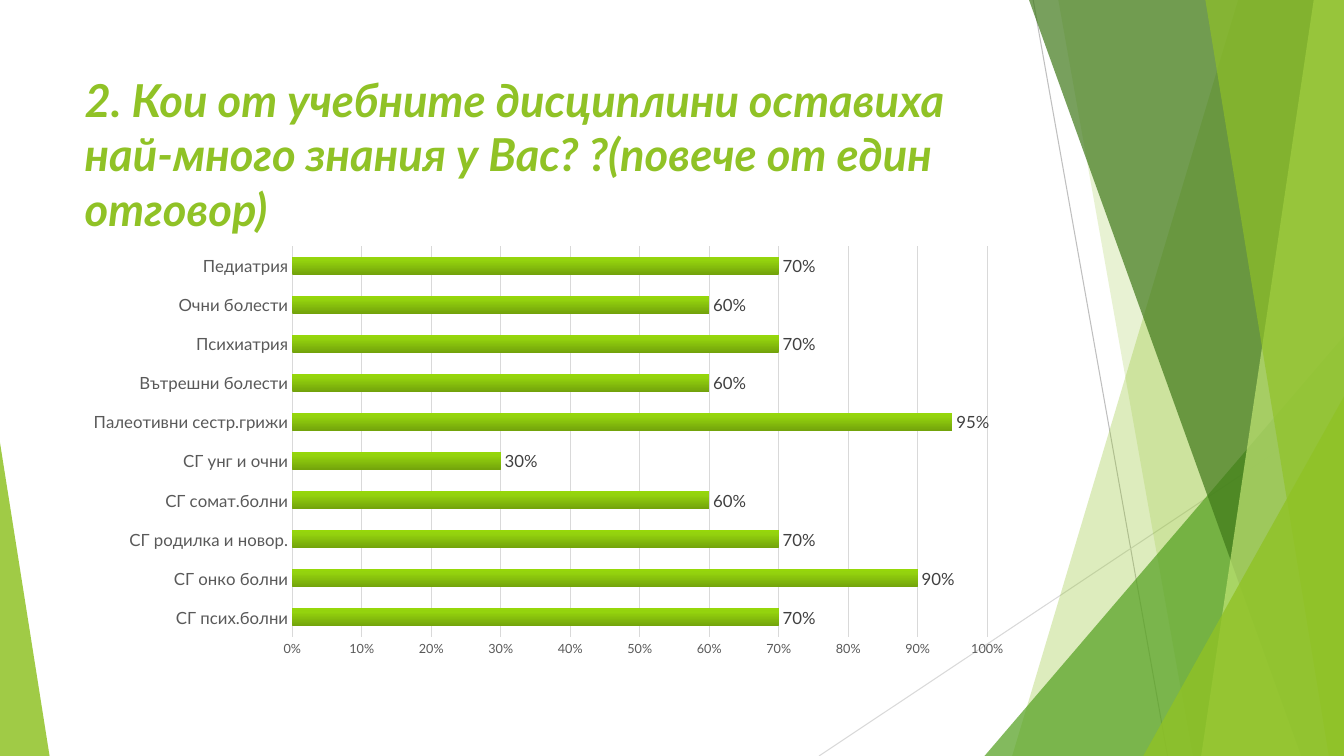
import pptx
import pptx.chart.data
import pptx.dml.color
import pptx.enum.chart
import pptx.enum.shapes
import pptx.enum.text
import pptx.oxml
import pptx.oxml.ns
import pptx.util
from lxml import etree

RGB = pptx.dml.color.RGBColor
LIME = RGB(0x90, 0xC2, 0x26)
PALE_LIME = RGB(0xC0, 0xE4, 0x74)
LEAF = RGB(0x54, 0xA0, 0x21)
FOREST = RGB(0x3F, 0x78, 0x19)
SILVER = RGB(0xBF, 0xBF, 0xBF)
LIGHT_GREY = RGB(0xD9, 0xD9, 0xD9)
AXIS_GREY = RGB(0x59, 0x59, 0x59)
LABEL_GREY = RGB(0x40, 0x40, 0x40)
BAR_STOPS = ((0, RGB(0x72, 0xA2, 0x0B)), (80, RGB(0x94, 0xD3, 0x0E)),
             (100, RGB(0x96, 0xD7, 0x0A)))

COLS, ROWS = 160, 90
TITLE = ("2. Кои от учебните дисциплини оставиха най-много знания у Вас? "
         "?(повече от един отговор)")
KNOWLEDGE = {
    "СГ псих.болни": 0.7,
    "СГ онко болни": 0.9,
    "СГ родилка и новор.": 0.7,
    "СГ сомат.болни": 0.6,
    "СГ унг и очни": 0.3,
    "Палеотивни сестр.грижи": 0.95,
    "Вътрешни болести": 0.6,
    "Психиатрия": 0.7,
    "Очни болести": 0.6,
    "Педиатрия": 0.7,
}


class Deck:
    """Draws on one slide, with all lengths in grid columns and rows."""

    font_name = "Lato"

    def __init__(self):
        self.prs = pptx.Presentation()
        self.prs.slide_width = pptx.util.Inches(13.333)
        self.prs.slide_height = pptx.util.Inches(7.5)
        self.s = self.prs.slides.add_slide(self.prs.slide_layouts[6])

    def grid(self, *lengths):
        """Turn alternating columns and rows into EMU."""
        units = (self.prs.slide_width / COLS, self.prs.slide_height / ROWS)
        return [round(n * units[i % 2]) for i, n in enumerate(lengths)]

    def style_font(self, font, size, color):
        font.name = self.font_name
        font.size = pptx.util.Pt(size)
        font.color.rgb = color

    def paint(self, sp, color, opacity):
        """Give a shape a flat, see-through fill and no outline."""
        sp.shadow.inherit = False
        sp.line.fill.background()
        sp.fill.solid()
        sp.fill.fore_color.rgb = color
        clr = sp.fill._xPr.find(".//" + pptx.oxml.ns.qn("a:srgbClr"))
        etree.SubElement(clr, pptx.oxml.ns.qn("a:alpha"), val=str(opacity * 1000))

    def line(self, x1, y1, x2, y2, color):
        sp = self.s.shapes.add_connector(
            pptx.enum.shapes.MSO_CONNECTOR.STRAIGHT, *self.grid(x1, y1, x2, y2))
        sp.line.color.rgb = color
        sp.line.width = pptx.util.Pt(0.75)
        etree.SubElement(sp._element.spPr, pptx.oxml.ns.qn("a:effectLst"))

    def facet(self, top_x, bottom_x, color, opacity):
        """Fill from a slanted edge to the right side of the slide."""
        edge = [self.grid(*point) for point in
                ((top_x, 0), (COLS, 0), (COLS, ROWS), (bottom_x, ROWS))]
        builder = self.s.shapes.build_freeform(*edge[0])
        builder.add_line_segments(edge[1:], close=True)
        self.paint(builder.convert_to_shape(), color, opacity)

    def triangle(self, x, y, width, apex, color, opacity):
        """Stand a triangle on the bottom edge; apex is 0 (left) to 1 (right)."""
        sp = self.s.shapes.add_shape(
            pptx.enum.shapes.MSO_SHAPE.ISOSCELES_TRIANGLE,
            *self.grid(x, y, width, ROWS - y))
        sp.adjustments[0] = apex
        self.paint(sp, color, opacity)

    def title(self, x, y, width, height, text):
        tf = self.s.shapes.add_textbox(*self.grid(x, y, width, height)).text_frame
        tf.word_wrap = True
        tf.vertical_anchor = pptx.enum.text.MSO_ANCHOR.TOP
        p = tf.paragraphs[0]
        p.text = text
        self.style_font(p.font, 32.4, LIME)
        p.font.bold = p.font.italic = True

    def bar_chart(self, x, y, width, height, shares):
        data = pptx.chart.data.CategoryChartData(number_format="0%")
        data.categories = list(shares)
        data.add_series("Series 1", list(shares.values()))
        chart = self.s.shapes.add_chart(
            pptx.enum.chart.XL_CHART_TYPE.BAR_CLUSTERED,
            *self.grid(x, y, width, height), data).chart
        chart.has_legend = chart.has_title = False
        chart.font.name = self.font_name
        chart.font.size = pptx.util.Pt(10)

        plot = chart.plots[0]
        plot.gap_width, plot.overlap, plot.vary_by_categories = 115, -20, False
        self.fill_bars(plot.series[0])
        plot.has_data_labels = True
        labels = plot.data_labels
        labels.show_value = True
        labels.number_format, labels.number_format_is_linked = "0%", False
        labels.position = pptx.enum.chart.XL_LABEL_POSITION.OUTSIDE_END
        self.style_font(labels.font, 12, LABEL_GREY)

        for axis, size in ((chart.category_axis, 12), (chart.value_axis, 9)):
            axis.major_tick_mark = pptx.enum.chart.XL_TICK_MARK.NONE
            axis.minor_tick_mark = pptx.enum.chart.XL_TICK_MARK.NONE
            self.style_font(axis.tick_labels.font, size, AXIS_GREY)
        chart.category_axis.format.line.color.rgb = LIGHT_GREY
        chart.category_axis.format.line.width = pptx.util.Pt(1)

        axis = chart.value_axis
        axis.minimum_scale, axis.maximum_scale, axis.major_unit = 0, 1, 0.1
        axis.tick_labels.number_format = "0%"
        axis.tick_labels.number_format_is_linked = False
        axis.format.line.fill.background()
        axis.has_major_gridlines = True
        axis.major_gridlines.format.line.color.rgb = LIGHT_GREY
        axis.major_gridlines.format.line.width = pptx.util.Pt(0.75)

    def fill_bars(self, series):
        """Shade the bars from dark at the bottom to bright at the top."""
        stops = "".join(
            f'<a:gs pos="{pos * 1000}"><a:srgbClr val="{color}"/></a:gs>'
            for pos, color in BAR_STOPS)
        gradient = pptx.oxml.parse_xml(
            f'<a:gradFill {pptx.oxml.ns.nsdecls("a")}><a:gsLst>{stops}</a:gsLst>'
            '<a:lin ang="16200000" scaled="0"/></a:gradFill>')
        series.invert_if_negative = False
        series.format.line.fill.background()
        series._element.spPr.insert(0, gradient)


def main():
    deck = Deck()
    deck.line(123, 0, 139, ROWS, SILVER)
    deck.line(COLS, 48.4, 97.5, ROWS, LIGHT_GREY)
    deck.facet(147.4, 120.5, LIME, 30)
    deck.facet(126, 142, LIME, 20)
    deck.triangle(117.2, 40, 42.8, 1, LEAF, 72)
    deck.facet(122.5, 154.9, FOREST, 70)
    deck.facet(156.4, 143, PALE_LIME, 70)
    deck.facet(143.5, 158.2, LIME, 65)
    deck.triangle(136.1, 47.2, 23.9, 1, LIME, 80)
    deck.triangle(0, 52.7, 5.9, 0, LIME, 85)
    deck.title(8.9, 8, 112.8, 17.3, TITLE)
    deck.bar_chart(8.9, 28.3, 112.8, 50.9, KNOWLEDGE)
    deck.prs.save("out.pptx")


if __name__ == "__main__":
    main()
